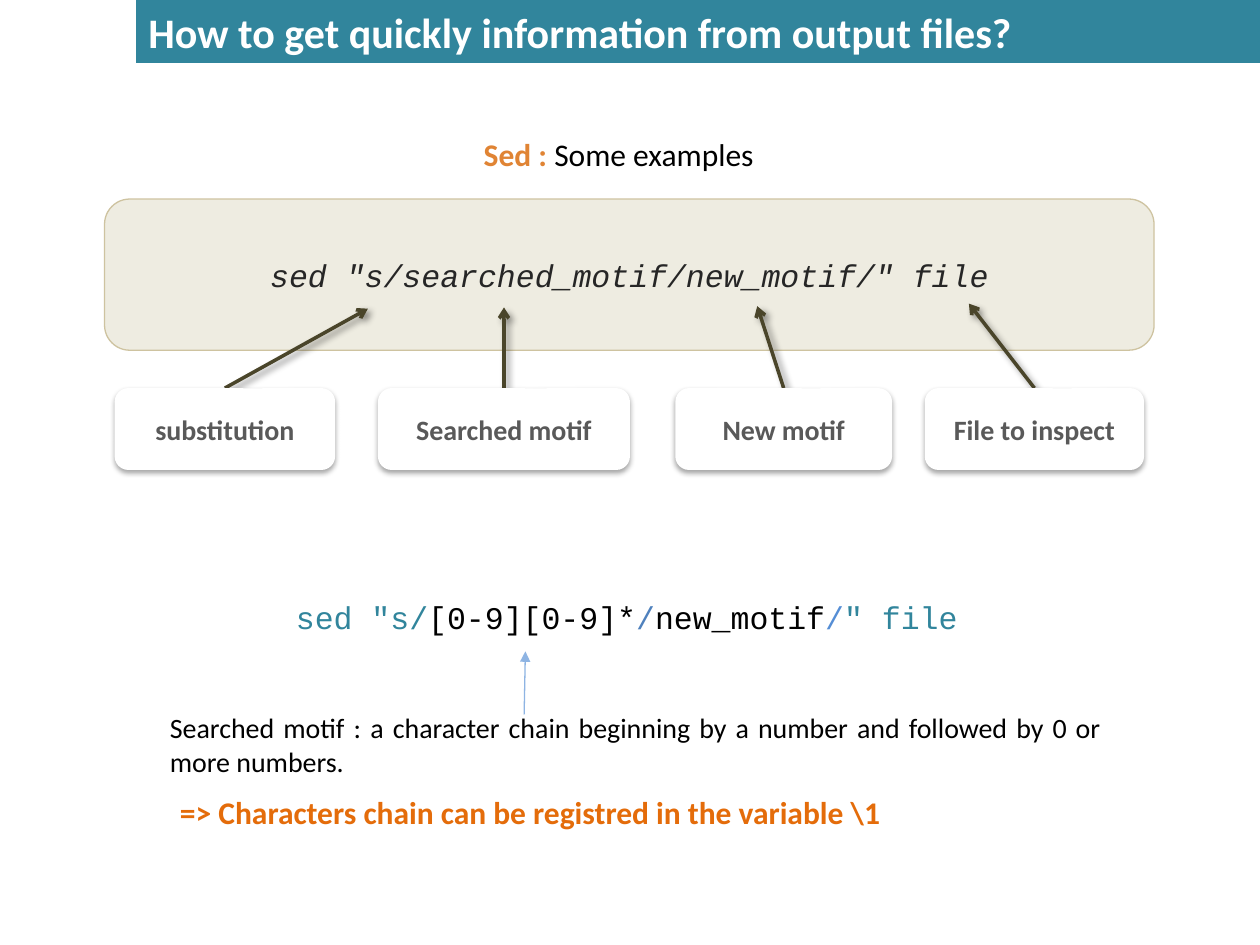
import pptx
import pptx.util
import pptx.dml.color
import pptx.enum.shapes
import pptx.enum.text
import pptx.oxml
import pptx.oxml.ns

Inches, Pt = pptx.util.Inches, pptx.util.Pt
SHAPE = pptx.enum.shapes.MSO_SHAPE
ALIGN = pptx.enum.text.PP_ALIGN
ANCHOR = pptx.enum.text.MSO_ANCHOR

COLORS = {
    "teal": "31859C", "white": "FFFFFF", "black": "000000",
    "orange": "E08434", "dark_orange": "E46C0A", "sand": "EEECE1",
    "sand_line": "CEC3A0", "code": "262626", "label": "595959",
    "arrow": "4A452A", "blue": "4F81BD", "mid_blue": "558ED5",
    "light_blue": "8EB4E3",
}


def rgb(name):
    """Return the named colour."""
    return pptx.dml.color.RGBColor.from_string(COLORS[name])


def set_effects(sp, shadow=None):
    """Give the shape an outer shadow (alpha, blur, distance, angle), or none."""
    inner = ""
    if shadow:
        alpha, blur, dist, angle = shadow
        inner = (f'<a:outerShdw blurRad="{Pt(blur)}" dist="{Pt(dist)}" dir="{angle * 60000}" '
                 f'rotWithShape="0"><a:srgbClr val="{COLORS["black"]}">'
                 f'<a:alpha val="{alpha * 1000}"/></a:srgbClr></a:outerShdw>')
    sp._element.spPr.append(pptx.oxml.parse_xml(
        f'<a:effectLst {pptx.oxml.ns.nsdecls("a")}>{inner}</a:effectLst>'))


def write(sp, runs, size, align=ALIGN.LEFT, font="Calibri", bold=None, italic=None,
          anchor=ANCHOR.MIDDLE, wrap=True):
    """Fill a shape with one paragraph of (text, colour, bold) runs."""
    tf = sp.text_frame
    tf.word_wrap = wrap
    tf.vertical_anchor = anchor
    p = tf.paragraphs[0]
    p.alignment = align
    p.font.name, p.font.size = font, Pt(size)
    p.font.bold, p.font.italic = bold, italic
    for text, color, *weight in runs:
        r = p.add_run()
        r.text = text
        r.font.color.rgb = rgb(color)
        if weight:
            r.font.bold = weight[0]


def add_text(s, box, runs, size, **style):
    """Add a text box in the given box."""
    sp = s.shapes.add_textbox(*map(Inches, box))
    write(sp, runs, size, **style)
    return sp


def add_box(s, kind, box, fill, line=None):
    """Add a filled preset shape with an optional outline."""
    sp = s.shapes.add_shape(kind, *map(Inches, box))
    sp.fill.solid()
    sp.fill.fore_color.rgb = rgb(fill)
    if line:
        sp.line.color.rgb = rgb(line)
        sp.line.width = Pt(0.75)
    else:
        sp.line.fill.background()
    return sp


def add_arrow(s, start, end, color, width, head, shadow=None):
    """Add a straight arrow between two points."""
    cx = s.shapes.add_connector(pptx.enum.shapes.MSO_CONNECTOR.STRAIGHT,
                                *map(Inches, (*start, *end)))
    cx.line.color.rgb = rgb(color)
    cx.line.width = Pt(width)
    cx.line._get_or_add_ln().append(pptx.oxml.parse_xml(
        f'<a:tailEnd {pptx.oxml.ns.nsdecls("a")} type="{head}"/>'))
    set_effects(cx, shadow)
    return cx


def title_bar(s, box):
    """Place the title band."""
    sp = add_box(s, SHAPE.RECTANGLE, box, "teal")
    sp.shadow.inherit = False
    write(sp, [("How to get quickly information from output files?", "white")], 24, bold=True)


def callout(s, box, text, target):
    """Place a labelled card with an arrow from its top to the target."""
    x, y, w, h = box
    cx = add_arrow(s, (x + w / 2, y), target, "arrow", 0, "arrow", (43, 4, 3, 45))
    sp = add_box(s, SHAPE.ROUNDED_RECTANGULAR_CALLOUT, box, "white")
    for i, value in enumerate((0.065, -0.496, 0.167)):
        sp.adjustments[i] = value
    set_effects(sp, (35, 3.1, 1.8, 90))
    write(sp, [(text, "label")], 16, align=ALIGN.CENTER, bold=True)
    cx.begin_connect(sp, 0)


def syntax_panel(s, box):
    """Place the general sed command and the callouts under it."""
    x, y, w, h = box
    add_text(s, (x + 0.99, y - 0.56, 6.18, 0.4),
             [("Sed : ", "orange", True), ("Some examples", "black")], 18, align=ALIGN.CENTER)
    sp = add_box(s, SHAPE.ROUNDED_RECTANGLE, box, "sand", "sand_line")
    sp.shadow.inherit = False
    write(sp, [('sed "s/searched_motif/new_motif/" file', "code")], 18,
          align=ALIGN.CENTER, font="Courier New", italic=True)
    labels = [
        ("substitution", 0.08, 1.75, (2.09, 0.87)),
        ("Searched motif", 2.17, 2, (3.17, 0.86)),
        ("New motif", 4.53, 1.72, (5.18, 0.85)),
        ("File to inspect", 6.51, 1.74, (6.86, 0.83)),
    ]
    for text, dx, width, (tx, ty) in labels:
        callout(s, (x + dx, y + h + 0.3, width, 0.65), text, (x + tx, y + ty))


def pattern_example(s, box):
    """Place the pattern command, its explanation and the conclusion."""
    x, y, w, h = box
    add_text(s, (x + 1, y, 5.5, 0.4),
             [('sed "s/', "teal"), ("[0-9][0-9]*", "black"), ("/", "blue"),
              ("new_motif", "black"), ("/", "mid_blue"), ('" file', "teal")],
             18, font="Courier New", wrap=False)
    add_text(s, (x, y + 0.89, w, 0.64),
             [("Searched motif : a character chain beginning by a number "
               "and followed by 0 or more numbers.", "black")],
             16, align=ALIGN.JUSTIFY, anchor=ANCHOR.TOP)
    add_arrow(s, (x + 2.91, y + 0.97), (x + 2.92, y + 0.47), "light_blue", 0.75, "triangle")
    add_text(s, (x + 0.08, y + 1.54, 5.82, 0.4),
             [("=> Characters chain can be registred in the variable \\1", "dark_orange")],
             18, bold=True, wrap=False)


def main():
    """Build the slide and save it."""
    prs = pptx.Presentation()
    prs.slide_width, prs.slide_height = Inches(10), Inches(7.5)
    s = prs.slides.add_slide(prs.slide_layouts[6])
    title_bar(s, (1.08, 0, 8.92, 0.5))
    syntax_panel(s, (0.83, 1.58, 8.33, 1.2))
    pattern_example(s, (1.25, 4.7, 7.59, 1.94))
    prs.save("out.pptx")


if __name__ == "__main__":
    main()
